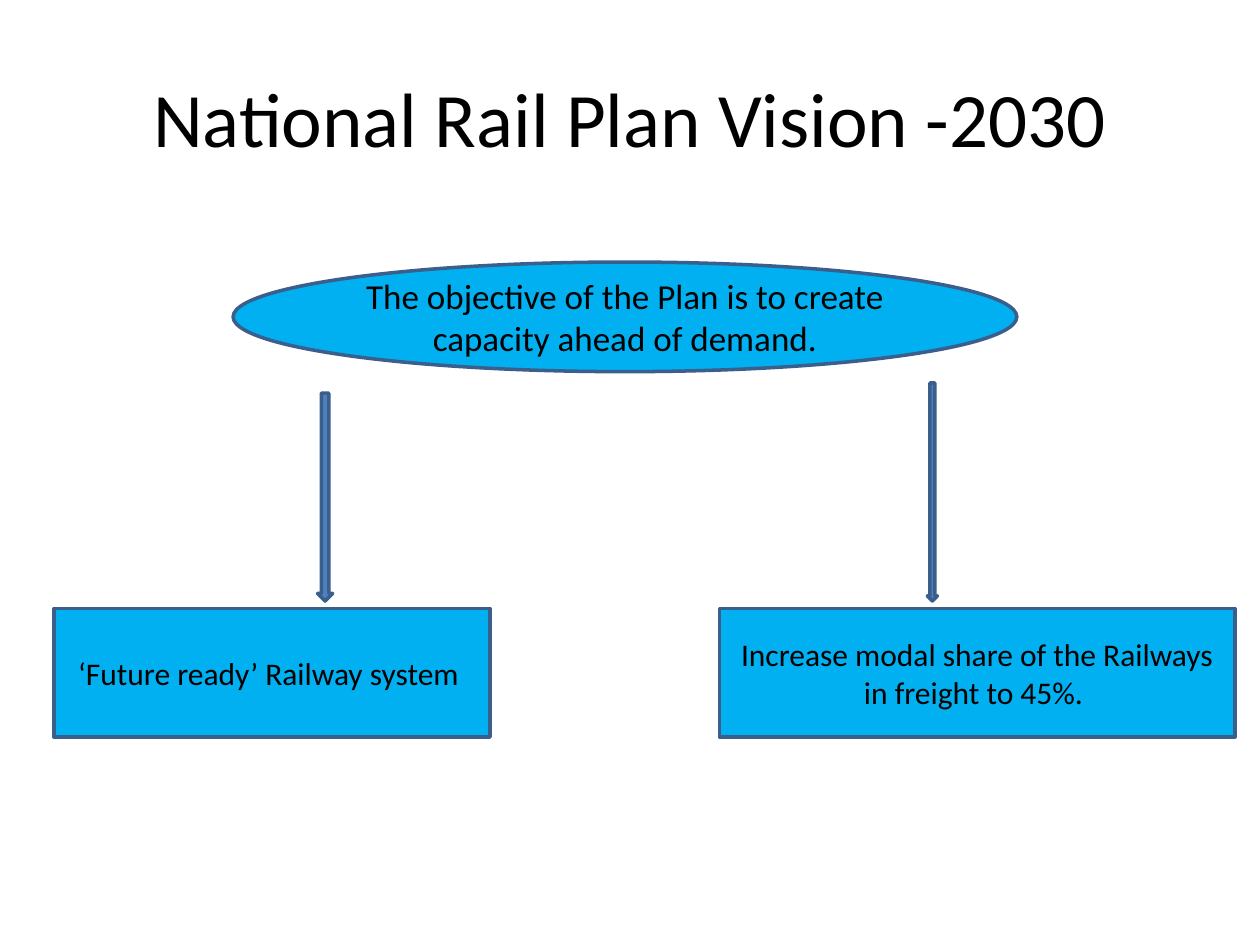
"""Build the National Rail Plan Vision slide."""
from pptx import Presentation
from pptx.dml.color import RGBColor
from pptx.enum.shapes import MSO_SHAPE
from pptx.enum.text import MSO_ANCHOR, PP_ALIGN
from pptx.util import Inches, Pt

COLORS = {"text": "000000", "box": "00B0F0", "arrow": "4F81BD", "outline": "3A5F8C"}


def add_filled_shape(kind, left, top, width, height, fill):
    shape = slide.shapes.add_shape(
        kind, Inches(left), Inches(top), Inches(width), Inches(height))
    shape.shadow.inherit = False
    shape.fill.solid()
    shape.fill.fore_color.rgb = RGBColor.from_string(COLORS[fill])
    shape.line.color.rgb = RGBColor.from_string(COLORS["outline"])
    shape.line.width = Pt(2)
    return shape


def write_centered(shape, text, size):
    frame = shape.text_frame
    frame.word_wrap = True
    frame.vertical_anchor = MSO_ANCHOR.MIDDLE
    frame.text = text
    para = frame.paragraphs[0]
    para.alignment = PP_ALIGN.CENTER
    font = para.runs[0].font
    font.name = "Calibri"
    font.size = Pt(size)
    font.color.rgb = RGBColor.from_string(COLORS["text"])


deck = Presentation()
deck.slide_width = Inches(10)
deck.slide_height = Inches(7.5)
slide = deck.slides.add_slide(deck.slide_layouts[6])

title = slide.shapes.add_textbox(Inches(0.5), Inches(0.3), Inches(9), Inches(1.25))
write_centered(title, "National Rail Plan Vision -2030", 44)

objective = add_filled_shape(MSO_SHAPE.OVAL, 1.85, 2.08, 6.22, 0.87, "box")
write_centered(
    objective, "The objective of the Plan is to create capacity ahead of demand.", 20)

goals = [
    (0.43, 3.46, "‘Future ready’ Railway system "),
    (5.71, 4.09, "Increase modal share of the Railways in freight to 45%. "),
]
for left, width, text in goals:
    goal = add_filled_shape(MSO_SHAPE.RECTANGLE, left, 4.83, width, 1.02, "box")
    write_centered(goal, text, 18)

arrow_bottom = 4.77
for left, top, width in [(2.52, 3.12, 0.12), (7.36, 3.04, 0.08)]:
    add_filled_shape(
        MSO_SHAPE.DOWN_ARROW, left, top, width, arrow_bottom - top, "arrow")

deck.save("out.pptx")
